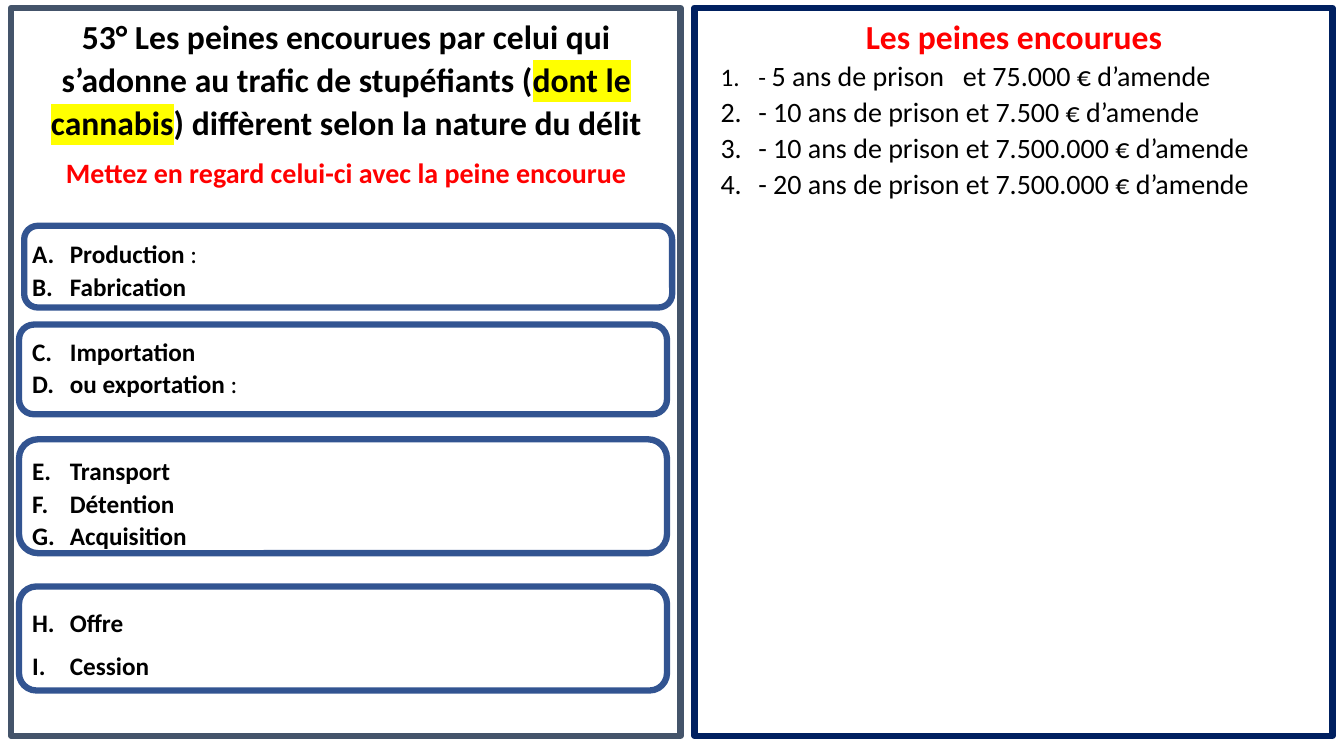
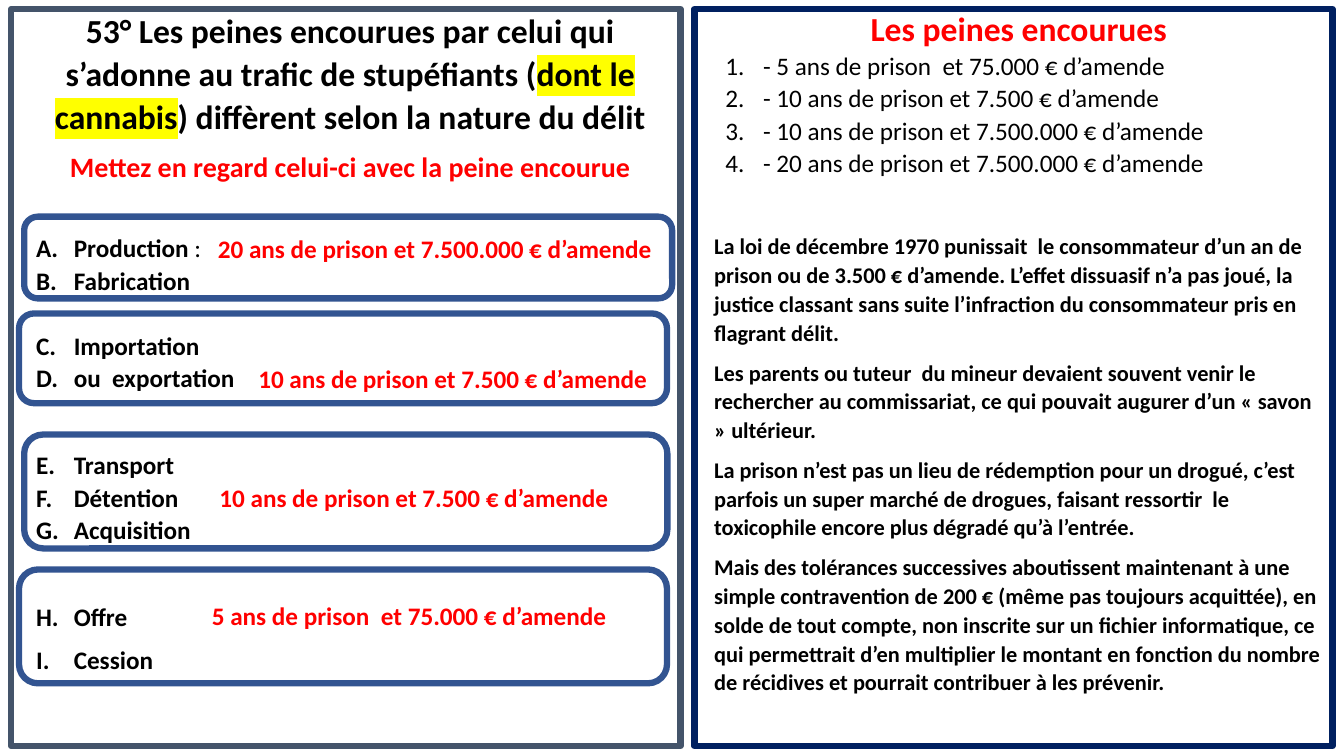
import pptx
import pptx.dml.color
import pptx.enum.shapes
import pptx.enum.text
import pptx.oxml
import pptx.oxml.ns
import pptx.util
from pptx.util import Cm

RGBColor = pptx.dml.color.RGBColor
BLACK = RGBColor(0x00, 0x00, 0x00)
RED = RGBColor(0xFF, 0x00, 0x00)
SLATE = RGBColor(0x44, 0x54, 0x6A)
NAVY = RGBColor(0x00, 0x20, 0x60)
BLUE = RGBColor(0x32, 0x54, 0x91)
YELLOW = RGBColor(0xFF, 0xFF, 0x00)

Pt = pptx.util.Pt
FORM = pptx.enum.shapes.MSO_SHAPE
CENTER = pptx.enum.text.PP_ALIGN.CENTER
LEFT = pptx.enum.text.PP_ALIGN.LEFT
FRAME = {
    "word_wrap": True,
    "auto_size": pptx.enum.text.MSO_AUTO_SIZE.NONE,
    "vertical_anchor": pptx.enum.text.MSO_ANCHOR.TOP,
}
HEAD = {"name": "Calibri", "size": Pt(24), "bold": True}
PROMPT = HEAD | {"size": Pt(20)}
ITEM = HEAD | {"size": Pt(18)}
PLAIN = ITEM | {"bold": False}
NOTE = HEAD | {"size": Pt(16)}


def write(frame, runs, align=LEFT, before=0, after=0, count=None, lines=1.07):
    for key, value in FRAME.items():
        setattr(frame, key, value)
    par = frame.paragraphs[0]
    if par.runs:
        par = frame.add_paragraph()
    layout = {"alignment": align, "line_spacing": lines,
              "space_before": Pt(before), "space_after": Pt(after)}
    for key, value in layout.items():
        setattr(par, key, value)
    if count:
        props = par._p.get_or_add_pPr()
        props.set("marL", str(Cm(0.95)))
        props.set("indent", str(-Cm(0.95)))
        mark = pptx.oxml.parse_xml(
            f'<a:buAutoNum {pptx.oxml.ns.nsdecls("a")} type="{count}"/>')
        props.append(mark)
    for text, look, tint, glow in runs:
        run = par.add_run()
        run.text = text
        for key, value in look.items():
            setattr(run.font, key, value)
        run.font.color.rgb = tint
        if glow:
            mark = pptx.oxml.parse_xml(
                f'<a:highlight {pptx.oxml.ns.nsdecls("a")}>'
                f'<a:srgbClr val="{glow}"/></a:highlight>')
            fill = run._r.rPr.find(pptx.oxml.ns.qn("a:solidFill"))
            fill.addnext(mark)


def outline(slide, form, place, tint):
    shape = slide.shapes.add_shape(form, *map(Cm, place))
    shape.shadow.inherit = False
    shape.fill.background()
    shape.line.color.rgb = tint
    shape.line.width = Pt(4.5)
    return shape


TITLE = [
    ("53° Les peines encourues par celui qui s’adonne au trafic de stupéfiants (", HEAD, BLACK, None),
    ("dont le cannabis", HEAD, BLACK, YELLOW),
    (") diffèrent selon la nature du délit", HEAD, BLACK, None),
]
GAPS = {"Production": 34, "Importation": 23.5, "Transport": 39, "Offre": 39, "Cession": 8}
FINES = [
    "10 ans de prison et 7.500 € d’amende",
    "10 ans de prison et 7.500.000 € d’amende",
    "20 ans de prison et 7.500.000 € d’amende",
]
NOTES = [
    "La loi de décembre 1970 punissait  le consommateur d’un an de prison ou de 3.500 € d’amende. L’effet dissuasif n’a pas joué, la justice classant sans suite l’infraction du consommateur pris en flagrant délit.",
    "Les parents ou tuteur  du mineur devaient souvent venir le rechercher au commissariat, ce qui pouvait augurer d’un « savon » ultérieur.",
    "La prison n’est pas un lieu de rédemption pour un drogué, c’est parfois un super marché de drogues, faisant ressortir  le toxicophile encore plus dégradé qu’à l’entrée.",
    "Mais des tolérances successives aboutissent maintenant à une simple contravention de 200 € (même pas toujours acquittée), en solde de tout compte, non inscrite sur un fichier informatique, ce qui permettrait d’en multiplier le montant en fonction du nombre de récidives et pourrait contribuer à les prévenir.",
]
PAGES = [
    {
        "frame": (0.2, 18.34),
        "title": (0.56, 0.2),
        "fines": (17.91, 0.2),
        "size": 20,
        "first": "5 ans de prison   et 75.000 € d’amende",
        "export": "ou exportation",
        "colon": " :",
        "boxes": [(0.61, 5.69, 16.33, 2.06), (0.48, 8.18, 16.33, 2.26),
                  (0.48, 11.07, 16.33, 2.87), (0.48, 14.78, 16.33, 2.62)],
        "answers": [],
        "notes": [],
    },
    {
        "frame": (0.23, 18.57),
        "title": (0.66, 0.05),
        "fines": (18.03, 0),
        "size": 18,
        "first": "5 ans de prison  et 75.000 € d’amende",
        "export": "ou  exportation",
        "colon": "",
        "boxes": [(0.61, 5.46, 16.33, 2.06), (0.48, 7.9, 16.33, 2.26),
                  (0.61, 10.95, 16.21, 2.87), (0.48, 14.35, 16.33, 2.87)],
        "answers": [(FINES[2], 4.78, 0.33), (FINES[0], 5.92, 1.14),
                    (FINES[0], 4.78, 1.07),
                    ("5 ans de prison  et 75.000 € d’amende", 4.72, 0.64)],
        "notes": NOTES,
    },
]

deck = pptx.Presentation()
deck.slide_width = Cm(33.87)
deck.slide_height = Cm(19.05)

for page in PAGES:
    slide = deck.slides.add_slide(deck.slide_layouts[5])
    top, height = page["frame"]
    outline(slide, FORM.RECTANGLE, (0.28, top, 16.87, height), SLATE)
    outline(slide, FORM.RECTANGLE, (17.5, top, 16.08, height), NAVY)

    left, top = page["title"]
    title = slide.shapes.title
    place = {"left": left, "top": top, "width": 16.33, "height": 3.5}
    for key, value in place.items():
        setattr(title, key, Cm(value))
    write(title.text_frame, TITLE, CENTER)

    acts = slide.shapes.add_textbox(Cm(left), Cm(top + 3.53), Cm(16.33), Cm(13.6)).text_frame
    write(acts, [("Mettez en regard celui-ci avec la peine encourue", PROMPT, RED, None)], CENTER)
    names = ["Production", "Fabrication", "Importation", page["export"],
             "Transport", "Détention", "Acquisition", "Offre", "Cession"]
    for name in names:
        runs = [(name, ITEM, BLACK, None)]
        if name == "Production":
            runs.append((" :", PLAIN, BLACK, None))
        elif name == page["export"] and page["colon"]:
            runs.append((page["colon"], PLAIN, BLACK, None))
        write(acts, runs, before=GAPS.get(name, 0), count="alphaUcPeriod")

    boxes = [outline(slide, FORM.ROUNDED_RECTANGLE, place, BLUE) for place in page["boxes"]]
    for box, (text, left, top) in zip(boxes, page["answers"]):
        inset = {"margin_left": left, "margin_top": top, "margin_right": 0, "margin_bottom": 0}
        for key, value in inset.items():
            setattr(box.text_frame, key, Cm(value))
        write(box.text_frame, [(text, ITEM, RED, None)], lines=1.0)

    left, top = page["fines"]
    fines = slide.shapes.add_textbox(Cm(left), Cm(top), Cm(15.29), Cm(4.8)).text_frame
    write(fines, [("Les peines encourues", HEAD, RED, None)], CENTER)
    look = PLAIN | {"size": Pt(page["size"])}
    for fine in [page["first"]] + FINES:
        dash = PLAIN if fine == page["first"] else look
        runs = [("- ", dash, BLACK, None), (fine, look, BLACK, None)]
        write(fines, runs, count="arabicPeriod")

    if page["notes"]:
        notes = slide.shapes.add_textbox(Cm(17.75), Cm(5.69), Cm(15.85), Cm(12.07)).text_frame
        for note in page["notes"]:
            write(notes, [(note, NOTE, BLACK, None)], after=8)

deck.save("out.pptx")
